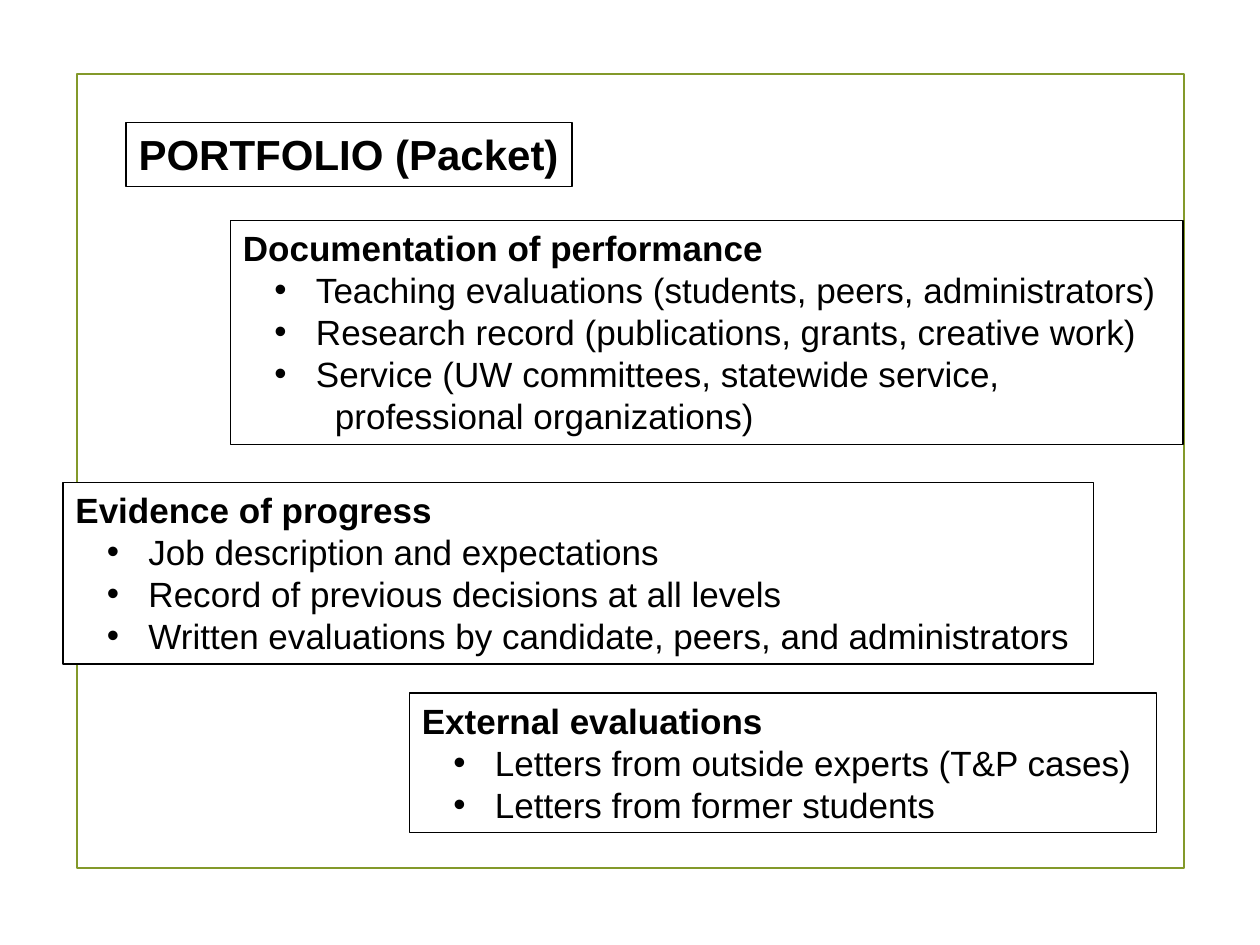
from pptx import Presentation
from pptx.dml.color import RGBColor
from pptx.enum.shapes import MSO_SHAPE
from pptx.enum.text import MSO_ANCHOR, MSO_AUTO_SIZE, PP_ALIGN
from pptx.oxml.ns import qn
from pptx.util import Inches, Pt
from lxml.etree import SubElement

BLACK = RGBColor(0x00, 0x00, 0x00)
WHITE = RGBColor(0xFF, 0xFF, 0xFF)
GREEN = RGBColor(0x83, 0x99, 0x2A)
FONT = "Arial"

FRAME = (0.61, 0.59, 8.79, 6.3)
TITLE = ("PORTFOLIO (Packet)", (1, 0.97, 3.54, 0.51))

# heading, place, bulleted items, unbulleted last line
BOXES = [
    ("Documentation of performance", (1.83, 1.75, 7.56, 1.78),
     ["Teaching evaluations (students, peers, administrators)",
      "Research record (publications, grants, creative work)",
      "Service (UW committees, statewide service,"],
     "professional organizations)"),
    ("Evidence of progress", (0.5, 3.83, 8.18, 1.44),
     ["Job description and expectations",
      "Record of previous decisions at all levels",
      "Written evaluations by candidate, peers, and administrators"],
     None),
    ("External evaluations", (3.25, 5.5, 5.93, 1.11),
     ["Letters from outside experts (T&P cases)",
      "Letters from former students"],
     None),
]


def outline(shape, color, width):
    shape.line.color.rgb = color
    shape.line.width = Pt(width)


def style(par, size, bold=False):
    par.alignment = PP_ALIGN.LEFT
    par.line_spacing = Pt(size * 1.2)
    for run in par.runs:
        font = run.font
        font.name, font.size, font.bold = FONT, Pt(size), bold
        font.color.rgb = BLACK


def indent(par, left, hang=0, bullet=None):
    """Set the left margin and, if given, a hanging bullet."""
    props = par._p.get_or_add_pPr()
    props.set("marL", str(Inches(left)))
    props.set("indent", str(-Inches(hang)))
    if bullet:
        SubElement(props, qn("a:buFont")).set("typeface", FONT)
        SubElement(props, qn("a:buChar")).set("char", bullet)


def add_rect(slide, place):
    rect = slide.shapes.add_shape(MSO_SHAPE.RECTANGLE, *map(Inches, place))
    rect.shadow.inherit = False
    return rect


def add_title(slide, text, place):
    title = slide.shapes.title
    title.left, title.top, title.width, title.height = map(Inches, place)
    outline(title, BLACK, 0.75)
    frame = title.text_frame
    frame.text = text
    frame.word_wrap = False
    frame.auto_size = MSO_AUTO_SIZE.NONE
    frame.vertical_anchor = MSO_ANCHOR.TOP
    style(frame.paragraphs[0], 24, bold=True)


def add_box(slide, heading, place, items, rest):
    box = add_rect(slide, place)
    box.fill.solid()
    box.fill.fore_color.rgb = WHITE
    outline(box, BLACK, 0.75)
    frame = box.text_frame
    frame.word_wrap = True
    frame.vertical_anchor = MSO_ANCHOR.TOP
    frame.text = heading
    style(frame.paragraphs[0], 20, bold=True)
    for item in items:
        par = frame.add_paragraph()
        par.text = item
        par.level = 1
        indent(par, 0.58, 0.33, "•")
        style(par, 20)
    if rest:
        par = frame.add_paragraph()
        par.text = rest
        par.level = 1
        indent(par, 0.73)
        style(par, 20)


def main():
    deck = Presentation()
    deck.slide_width, deck.slide_height = Inches(10), Inches(7.5)
    slide = deck.slides.add_slide(deck.slide_layouts[5])
    border = add_rect(slide, FRAME)
    border.fill.background()
    outline(border, GREEN, 1.25)
    add_title(slide, *TITLE)
    for box in BOXES:
        add_box(slide, *box)
    deck.save("out.pptx")


if __name__ == "__main__":
    main()
